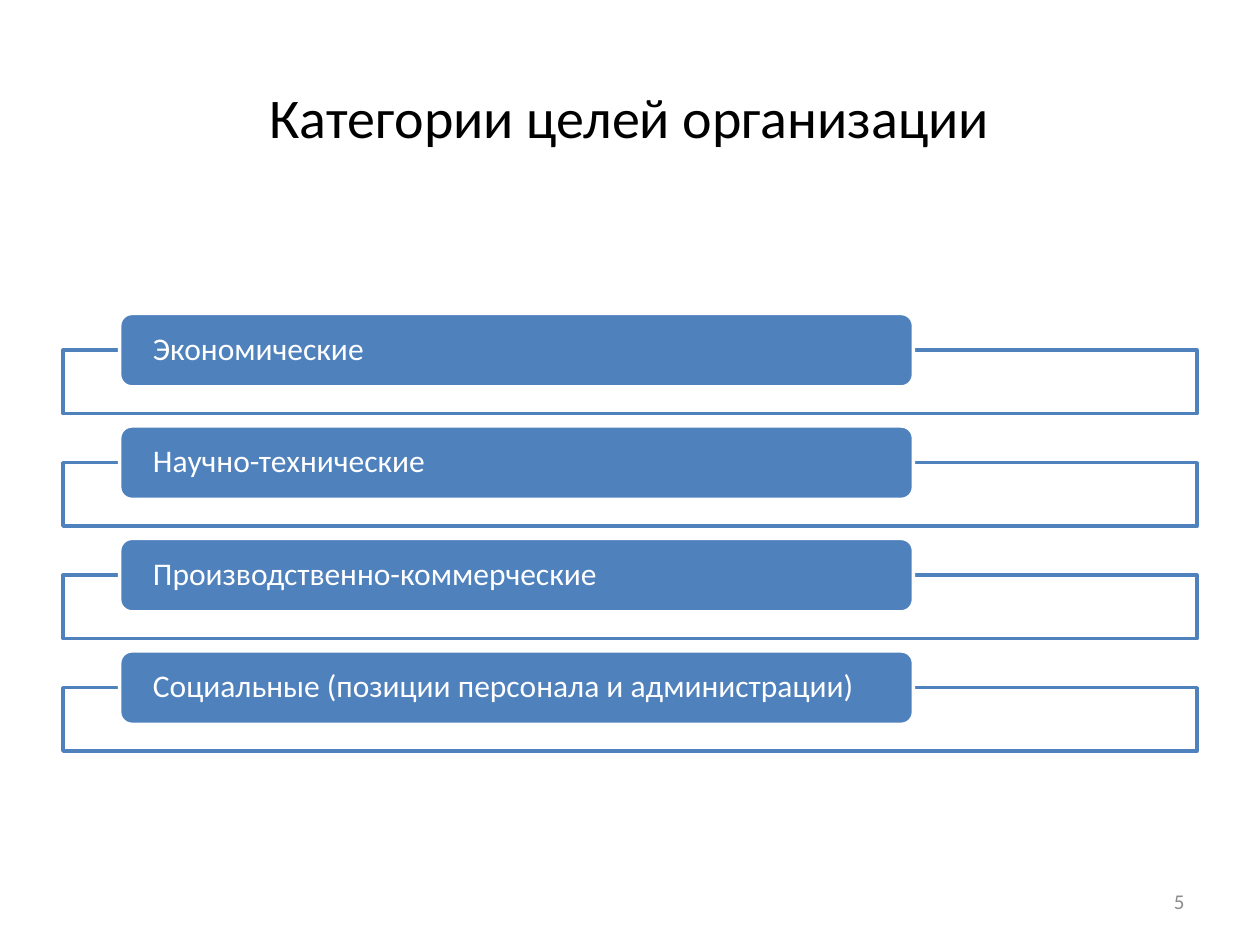
from dataclasses import dataclass

from lxml.etree import SubElement
from pptx import Presentation
from pptx.dml.color import RGBColor
from pptx.enum.shapes import MSO_SHAPE
from pptx.enum.text import MSO_ANCHOR, PP_ALIGN
from pptx.oxml.ns import qn
from pptx.util import Cm, Pt


@dataclass(frozen=True)
class Theme:
    """Colours, font and type sizes of the slide."""

    accent: RGBColor = RGBColor(0x4F, 0x81, 0xBD)
    paper: RGBColor = RGBColor(0xFF, 0xFF, 0xFF)
    ink: RGBColor = RGBColor(0, 0, 0)
    muted: RGBColor = RGBColor(0x8C, 0x8C, 0x8C)
    font: str = "Calibri"
    title_size: int = 32
    label_size: int = 18
    number_size: int = 12
    line_width: int = 2


@dataclass(frozen=True)
class Box:
    """A region of the slide in centimetres."""

    left: float
    top: float
    width: float
    height: float

    def lengths(self):
        """Return the four sides as lengths."""
        return Cm(self.left), Cm(self.top), Cm(self.width), Cm(self.height)


THEME = Theme()
CATEGORIES = (
    "Экономические",
    "Научно-технические",
    "Производственно-коммерческие",
    "Социальные (позиции персонала и администрации)",
)


def write_text(holder, text, size, color, align):
    """Write one vertically centred line of text into a shape."""
    frame = holder.text_frame
    frame.word_wrap = True
    frame.vertical_anchor = MSO_ANCHOR.MIDDLE
    paragraph = frame.paragraphs[0]
    paragraph.alignment = align
    run = paragraph.add_run()
    run.text = text
    run.font.name = THEME.font
    run.font.size = Pt(size)
    run.font.color.rgb = color
    return frame


def add_panel(slide, preset, box, fill, line):
    """Add a filled and outlined shape without a shadow."""
    panel = slide.shapes.add_shape(preset, *box.lengths())
    panel.shadow.inherit = False
    panel.fill.solid()
    panel.fill.fore_color.rgb = fill
    panel.line.color.rgb = line
    panel.line.width = Pt(THEME.line_width)
    return panel


def add_title(slide, box, text):
    """Place the centred slide title."""
    title = slide.shapes.add_textbox(*box.lengths())
    write_text(title, text, THEME.title_size, THEME.ink, PP_ALIGN.CENTER)


def add_category(slide, box, text):
    """Place a category label over the top edge of its frame."""
    label_height = 1.48
    frame_top = box.top + label_height / 2
    frame_box = Box(box.left, frame_top, box.width, box.top + box.height - frame_top)
    frame = add_panel(slide, MSO_SHAPE.RECTANGLE, frame_box, THEME.paper, THEME.accent)
    frame_color = frame.fill._xPr.find(qn("a:solidFill"))[0]
    SubElement(frame_color, qn("a:alpha"), val="90000")

    label_box = Box(box.left + box.width * 0.05, box.top, box.width * 0.7, label_height)
    label = add_panel(slide, MSO_SHAPE.ROUNDED_RECTANGLE, label_box, THEME.accent, THEME.paper)
    label_text = write_text(label, text, THEME.label_size, THEME.paper, PP_ALIGN.LEFT)
    label_text.margin_left = label_text.margin_right = Cm(0.6)
    label_text.margin_top = label_text.margin_bottom = 0
    label_text.paragraphs[0].line_spacing = 0.9


def add_category_list(slide, box, categories):
    """Stack the categories with equal gaps inside the box."""
    gap = 0.25
    row_height = (box.height + gap) / len(categories) - gap
    for index, category in enumerate(categories):
        top = box.top + index * (row_height + gap)
        add_category(slide, Box(box.left, top, box.width, row_height), category)


def add_slide_number(slide, box, number):
    """Place the slide number at the right of the footer."""
    footer = slide.shapes.add_textbox(*box.lengths())
    write_text(footer, number, THEME.number_size, THEME.muted, PP_ALIGN.RIGHT)


def main():
    """Build and save the slide."""
    deck = Presentation()
    deck.slide_width, deck.slide_height = Cm(25.4), Cm(19.05)
    slide = deck.slides.add_slide(deck.slide_layouts[6])
    add_title(slide, Box(1.27, 0.76, 22.86, 3.18), "Категории целей организации")
    add_category_list(slide, Box(1.27, 6.32, 22.86, 8.82), CATEGORIES)
    add_slide_number(slide, Box(18.2, 17.66, 5.93, 1.01), "5")
    deck.save("out.pptx")


if __name__ == "__main__":
    main()
